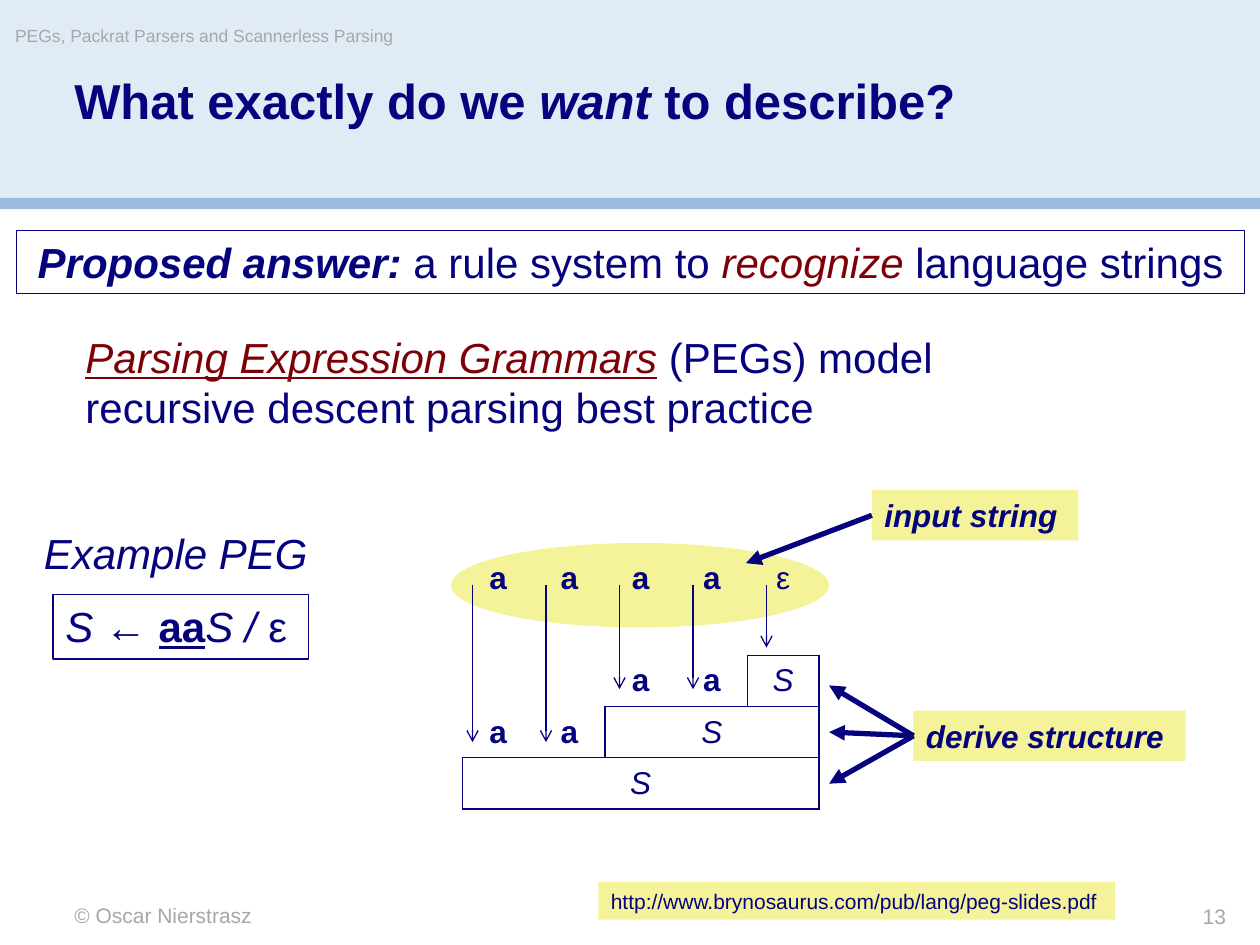
import pptx
import pptx.dml.color
import pptx.enum.shapes
import pptx.enum.text
import pptx.oxml
import pptx.oxml.ns
import pptx.util
from pptx.util import Inches

NAVY, RED, GREY, YELLOW = "05027D", "7E0007", "A7A7A7", "F5F399"
TITLE_BLUE, BAND, STRIPE = "0A017F", "E1EBF5", "9CBDDE"
SHAPE = pptx.enum.shapes.MSO_SHAPE
ALIGN = pptx.enum.text.PP_ALIGN
NO_STYLE = "{2D5ABB26-0587-4C30-8999-92F81FD0307C}"

# Runs are (text, flags[, colour]); flags: b bold, i italic, u underline
PLAIN_TEXTS = [
    ((0.59, 0.61, 8.83, 0.89), 28, TITLE_BLUE, ALIGN.LEFT,
     [("What exactly do we ", "b"), ("want ", "bi"), ("to describe?", "b")]),
    ((0.59, 7.16, 4.17, 0.2), 12, GREY, ALIGN.LEFT, [("© Oscar Nierstrasz", "")]),
    ((0.12, 0.2, 5.9, 0.28), 10, GREY, ALIGN.LEFT,
     [("PEGs, Packrat Parsers and Scannerless Parsing", "")]),
    ((8.25, 7.17, 1.48, 0.2), 12, GREY, ALIGN.RIGHT, [("13", "")]),
]
ANSWER = [("Proposed answer: ", "bi"), ("a rule system to ", ""),
          ("recognize ", "i", RED), ("language strings", "")]
MODEL = [("Parsing Expression Grammars", "iu", RED),
         (" (PEGs) model recursive descent parsing best practice", "")]
RULE = [("S ", "i"), ("← ", ""), ("aa", "bu"), ("S /", "i"), (" ε", "")]
URL = [("http://www.brynosaurus.com/pub/lang/peg-slides.pdf", "")]

LETTERS = {0: {0: "a", 1: "a", 2: "a", 3: "a", 4: "ε"},
           2: {2: "a", 3: "a"},
           3: {0: "a", 1: "a"}}
DERIVED = {2: 4, 3: 2, 4: 0}  # row: first column of its S
SIZE = 5
MATCH_ENDS = [5.89, 5.89, 5.47, 5.47, 5.14]
STRUCTURE_ENDS = [5.44, 6.22, 5.81]


def rgb(color):
    return pptx.dml.color.RGBColor.from_string(color)


def write(tf, runs, size, color=NAVY, align=ALIGN.LEFT):
    p = tf.paragraphs[0]
    p.alignment = align
    p.font.name, p.font.size = "Arial", pptx.util.Pt(size)
    p.font.color.rgb = rgb(color)
    for text, flags, *own in runs:
        r = p.add_run()
        r.text = text
        r.font.bold, r.font.italic = "b" in flags, "i" in flags
        if "u" in flags:
            r.font.underline = True
        if own:
            r.font.color.rgb = rgb(own[0])
    return p


def add_shape(s, kind, box, fill=None, line=None):
    sp = s.shapes.add_shape(kind, *map(Inches, box))
    sp.shadow.inherit = False
    if fill:
        sp.fill.solid()
        sp.fill.fore_color.rgb = rgb(fill)
    else:
        sp.fill.background()
    if line:
        sp.line.color.rgb = rgb(line)
        sp.line.width = pptx.util.Pt(0.75)
    else:
        sp.line.fill.background()
    return sp


def add_box(s, box, runs, size, fill=None, line=None, wrap=False, align=ALIGN.LEFT):
    sp = add_shape(s, SHAPE.RECTANGLE, box, fill, line)
    tf = sp.text_frame
    tf.word_wrap = wrap
    tf.auto_size = pptx.enum.text.MSO_AUTO_SIZE.SHAPE_TO_FIT_TEXT
    tf.vertical_anchor = pptx.enum.text.MSO_ANCHOR.TOP
    write(tf, runs, size, align=align)
    return sp


def add_arrow(s, start, end, width, head, source=None):
    """Draw an arrow, joined to the left side of source if there is one."""
    line = s.shapes.add_connector(pptx.enum.shapes.MSO_CONNECTOR.STRAIGHT,
                                  *map(Inches, start + end))
    if source is not None:
        line.begin_connect(source, 1)
    line.line.color.rgb = rgb(NAVY)
    line.line.width = pptx.util.Pt(width)
    ln = line.line._get_or_add_ln()
    ln.append(ln.makeelement(pptx.oxml.ns.qn("a:tailEnd"), {"type": head}))
    sp_pr = line._element.spPr
    sp_pr.append(sp_pr.makeelement(pptx.oxml.ns.qn("a:effectLst"), {}))


def set_borders(cell, sides):
    tc_pr = cell._tc.get_or_add_tcPr()
    for side in "LRTB":
        paint = "<a:noFill/>"
        if side in sides:
            paint = f'<a:solidFill><a:srgbClr val="{NAVY}"/></a:solidFill>'
        tc_pr.append(pptx.oxml.parse_xml(
            f'<a:ln{side} {pptx.oxml.ns.nsdecls("a")} w="12700">{paint}</a:ln{side}>'))


def add_derivation(s):
    frame = s.shapes.add_table(SIZE, SIZE, *map(Inches, (3.67, 4.39, 2.83, 2.03)))
    table = frame.table
    table.first_row = table.horz_banding = False
    table._tbl.tblPr.find(pptx.oxml.ns.qn("a:tableStyleId")).text = NO_STYLE
    for row in range(SIZE):
        first = DERIVED.get(row, SIZE)
        for col in range(SIZE):
            cell = table.cell(row, col)
            if col >= first:
                sides = "LRTB"
            else:
                sides = "R" if col == first - 1 and row in DERIVED else ""
                sides += "B" if col >= DERIVED.get(row + 1, SIZE) else ""
            set_borders(cell, sides)
            cell.fill.background()
            cell.vertical_anchor = pptx.enum.text.MSO_ANCHOR.MIDDLE
            letter = LETTERS.get(row, {}).get(col)
            runs = [(letter, "b" if letter == "a" else "")] if letter else []
            if col == first:
                runs = [("S", "i")]
            write(cell.text_frame, runs, 18, align=ALIGN.CENTER)
        if first < SIZE - 1:
            table.cell(row, first).merge(table.cell(row, SIZE - 1))


def main():
    prs = pptx.Presentation()
    prs.slide_width, prs.slide_height = Inches(10), Inches(7.5)
    s = prs.slides.add_slide(prs.slide_layouts[6])

    add_shape(s, SHAPE.RECTANGLE, (0, 0, 10, 1.58), BAND)
    add_shape(s, SHAPE.RECTANGLE, (0, 1.57, 10, 0.09), STRIPE)
    add_shape(s, SHAPE.OVAL, (3.58, 4.31, 3, 0.67), YELLOW)

    for box, size, color, align, runs in PLAIN_TEXTS:
        tf = s.shapes.add_textbox(*map(Inches, box)).text_frame
        tf.word_wrap = True
        tf.margin_left = tf.margin_right = tf.margin_top = tf.margin_bottom = 0
        p = write(tf, runs, size, color, align)
        if color == TITLE_BLUE:
            p.line_spacing = 0.9

    add_box(s, (4.75, 7, 4.1, 0.3), URL, 12, fill=YELLOW)
    add_box(s, (0.13, 1.83, 9.75, 0.5), ANSWER, 24, line=NAVY, wrap=True,
            align=ALIGN.CENTER)
    add_box(s, (0.58, 2.58, 7.25, 0.91), MODEL, 24, wrap=True)
    add_box(s, (0.42, 4.72, 2.03, 0.51), RULE, 24, line=NAVY)
    add_box(s, (0.25, 4.14, 2.39, 0.51), [("Example PEG", "i")], 24)

    add_derivation(s)

    label = add_box(s, (6.92, 3.89, 1.64, 0.4), [("input string", "bi")], 18, fill=YELLOW)
    add_arrow(s, (6.92, 4.09), (5.92, 4.47), 3, "triangle", label)
    for i, bottom in enumerate(MATCH_ENDS):
        x = 3.75 + i * 7 / 12
        add_arrow(s, (x, 4.64), (x, bottom), 0.75, "arrow")

    label = add_box(s, (7.25, 5.64, 2.16, 0.4), [("derive structure", "bi")], 18, fill=YELLOW)
    for y in STRUCTURE_ENDS:
        add_arrow(s, (7.25, 5.84), (6.58, y), 3, "triangle", label)

    prs.save("out.pptx")


if __name__ == "__main__":
    main()
